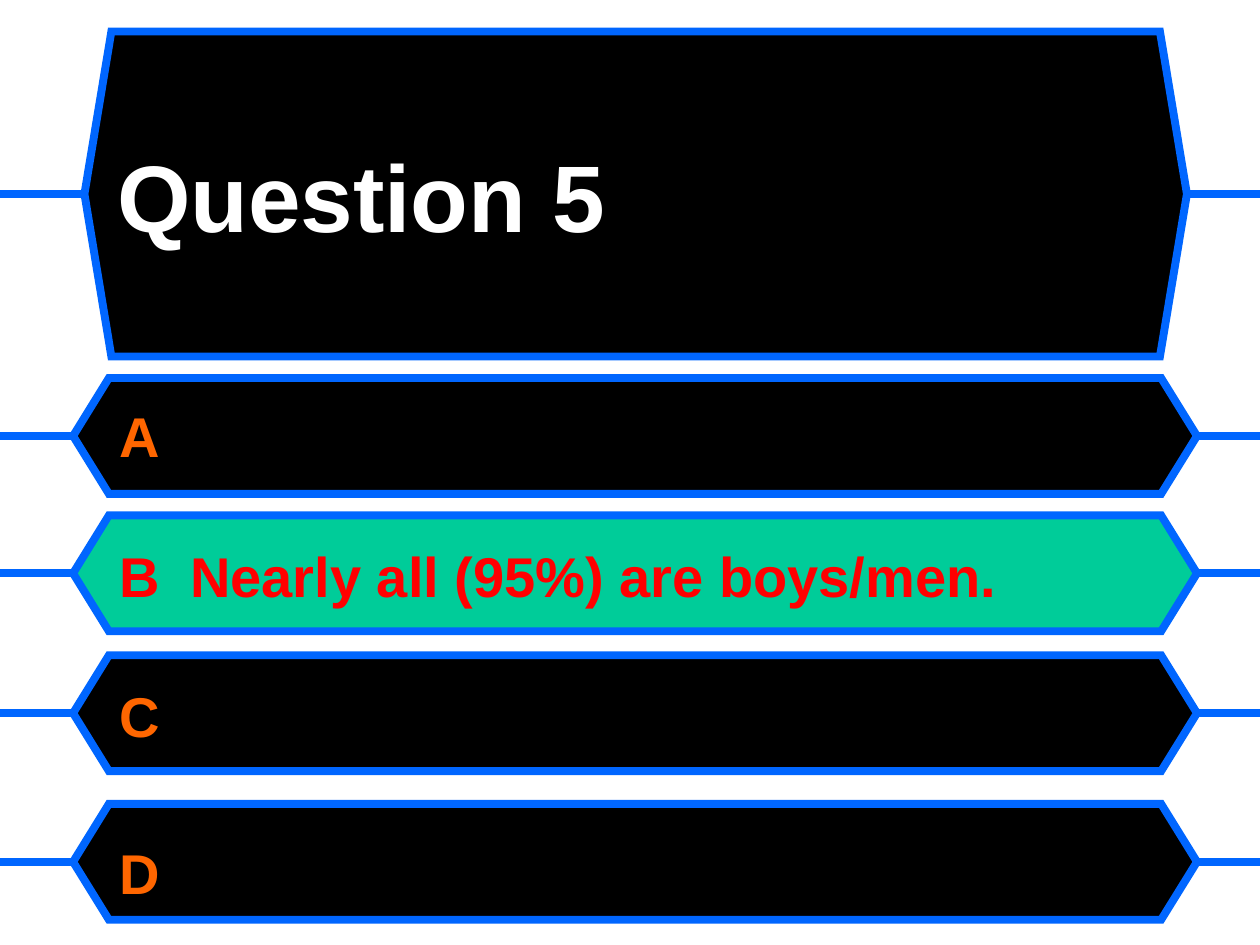
from lxml.etree import SubElement
from pptx import Presentation
from pptx.dml.color import RGBColor
from pptx.enum.shapes import MSO_CONNECTOR as Link, MSO_SHAPE as Kind
from pptx.enum.text import MSO_ANCHOR as Anchor, MSO_AUTO_SIZE as Auto, PP_ALIGN as Align
from pptx.oxml.ns import qn
from pptx.util import Inches, Pt

BLACK = RGBColor(0x00, 0x00, 0x00)
WHITE = RGBColor(0xFF, 0xFF, 0xFF)
BLUE = RGBColor(0x00, 0x66, 0xFF)
GREEN = RGBColor(0x00, 0xCC, 0x99)
ORANGE = RGBColor(0xFF, 0x66, 0x00)
RED = RGBColor(0xFF, 0x00, 0x00)
WIDE, HIGH = 10, 7.5
ROW = 0.92
CHOICES = [
    ("A", 3.0, BLACK, ORANGE, 0),
    ("B\tNearly all (95%) are boys/men.", 4.09, GREEN, RED, 41.5),
    ("C", 5.2, BLACK, ORANGE, 41.5),
    ("D", 6.38, BLACK, ORANGE, 51.5),
]


def edge(line):
    """Give a line the blue stroke with sharp corners."""
    line.color.rgb = BLUE
    line.width = Pt(4.5)
    SubElement(line._get_or_add_ln(), qn("a:miter"), lim="800000")


def wire(slide, start, end, y):
    """Draw a level line from start to end."""
    link = slide.shapes.add_connector(
        Link.STRAIGHT, Inches(start), Inches(y), Inches(end), Inches(y))
    edge(link.line)
    SubElement(link._element.spPr, qn("a:effectLst"))


def panel(slide, left, top, width, height, fill, slant):
    """Draw a hexagon with a wire from each tip to the slide's edge."""
    shape = slide.shapes.add_shape(
        Kind.HEXAGON, Inches(left), Inches(top), Inches(width), Inches(height))
    shape.adjustments[0] = slant
    shape.shadow.inherit = False
    shape.fill.solid()
    shape.fill.fore_color.rgb = fill
    edge(shape.line)
    mid = top + height / 2
    wire(slide, 0, left, mid)
    wire(slide, left + width, WIDE, mid)


def place(slide, holder, left, top, width, height, anchor):
    """Move a placeholder to the front and return its text frame."""
    holder.left, holder.top = Inches(left), Inches(top)
    holder.width, holder.height = Inches(width), Inches(height)
    slide.shapes._spTree.append(holder._element)
    frame = holder.text_frame
    frame.word_wrap = True
    frame.auto_size = Auto.NONE
    frame.vertical_anchor = anchor
    return frame


def write(para, text, size, color, before=0, hang=0):
    """Put bold Arial text without a bullet into a paragraph."""
    props = para._p.get_or_add_pPr()
    props.set("marL", str(Inches(hang)))
    props.set("indent", str(-Inches(hang)))
    SubElement(props, qn("a:buNone"))
    para.alignment = Align.LEFT
    para.space_before = Pt(before)
    run = para.add_run()
    run.text = text
    font = run.font
    font.name, font.size, font.bold = "Arial", Pt(size), True
    font.color.rgb = color


def main():
    """Build the quiz slide and save it."""
    deck = Presentation()
    deck.slide_width, deck.slide_height = Inches(WIDE), Inches(HIGH)
    slide = deck.slides.add_slide(deck.slide_layouts[1])
    title, body = slide.placeholders
    panel(slide, 0.67, 0.25, 8.75, 2.58, BLACK, 0.083)
    for _, top, fill, _, _ in CHOICES:
        panel(slide, 0.58, top, 8.92, ROW, fill, 0.309)
    head = place(slide, title, 0.83, 0.42, 8.42, 2.25, Anchor.MIDDLE)
    write(head.paragraphs[0], "Question 5", 54, WHITE)
    frame = place(slide, body, 0.85, 3.14, 8.33, 4.29, Anchor.TOP)
    for num, (text, _, _, color, before) in enumerate(CHOICES):
        para = frame.add_paragraph() if num else frame.paragraphs[0]
        write(para, text, 32, color, before=before, hang=0.56)
    deck.save("out.pptx")


if __name__ == "__main__":
    main()
